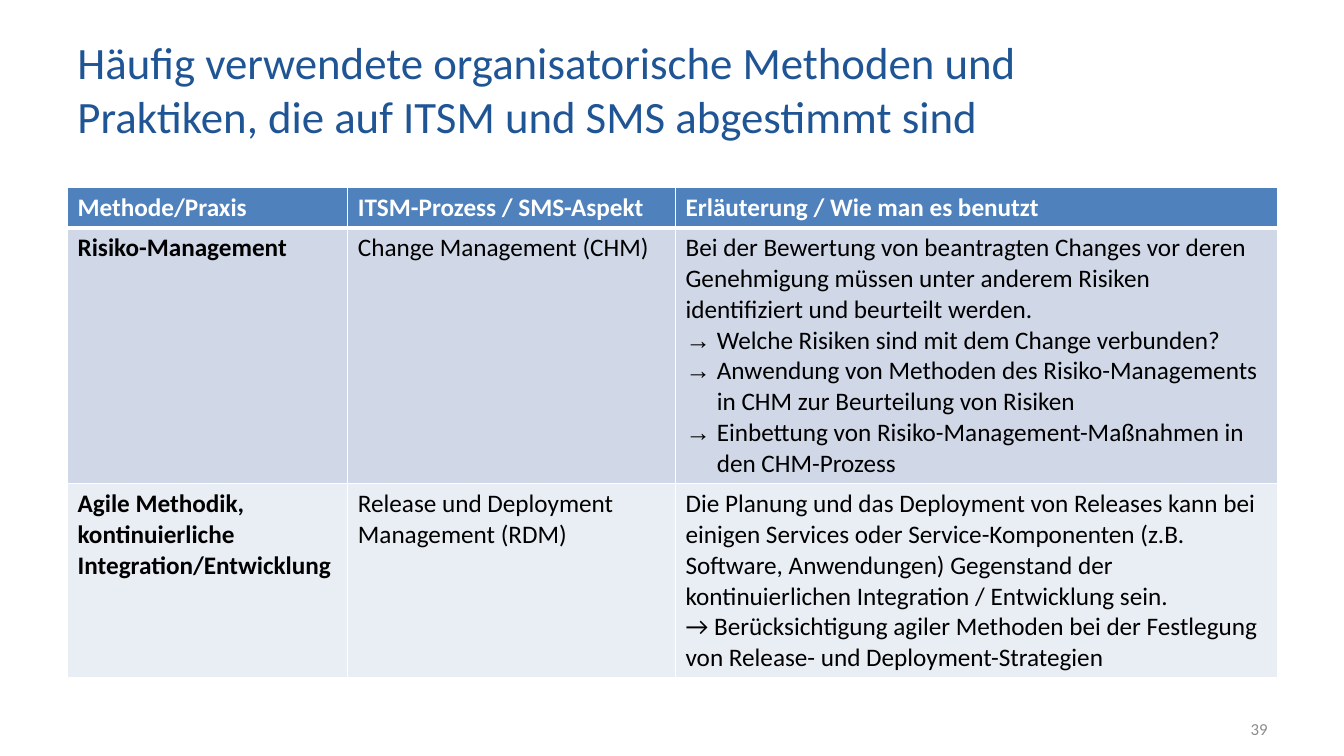
from dataclasses import dataclass

from lxml import etree
from pptx import Presentation
from pptx.dml.color import RGBColor
from pptx.enum.text import MSO_ANCHOR, PP_ALIGN
from pptx.oxml.ns import qn
from pptx.util import Inches, Pt

MIDDLE = MSO_ANCHOR.MIDDLE
LEFT, RIGHT = PP_ALIGN.LEFT, PP_ALIGN.RIGHT


@dataclass(frozen=True)
class Theme:
    font: str = "Calibri"
    title: str = "205595"
    header: str = "4F81BD"
    bands: tuple = ("D0D8E8", "E9EDF4")
    white: str = "FFFFFF"
    body: str = "000000"
    number: str = "8C8C8C"
    title_size: int = 32
    body_size: int = 18
    number_size: int = 12


THEME = Theme()
ARROW = "→"
BULLET_INDENT = 0.31
COLUMN_WIDTHS = (2.78, 3.25, 5.97)
ROW_HEIGHTS = (0.4, 2.54, 1.92)
METHODS = (
    (("Methode/Praxis",), ("ITSM-Prozess / SMS-Aspekt",),
     ("Erläuterung / Wie man es benutzt",)),
    (("Risiko-Management",), ("Change Management (CHM)",),
     ("Bei der Bewertung von beantragten Changes vor deren Genehmigung "
      "müssen unter anderem Risiken identifiziert und beurteilt werden.",
      ("Welche Risiken sind mit dem Change verbunden?",),
      ("Anwendung von Methoden des Risiko-Managements in CHM zur "
       "Beurteilung von Risiken",),
      ("Einbettung von Risiko-Management-Maßnahmen in den CHM-Prozess",))),
    (("Agile Methodik, kontinuierliche Integration/Entwicklung",),
     ("Release und Deployment Management (RDM)",),
     ("Die Planung und das Deployment von Releases kann bei einigen Services "
      "oder Service-Komponenten (z.B. Software, Anwendungen) Gegenstand der "
      "kontinuierlichen Integration / Entwicklung sein.",
      "→ Berücksichtigung agiler Methoden bei der Festlegung von Release- "
      "und Deployment-Strategien")),
)


def style_runs(paragraph, size, color, bold=False):
    for run in paragraph.runs:
        run.font.name = THEME.font
        run.font.size = Pt(size)
        run.font.bold = bold
        run.font.color.rgb = RGBColor.from_string(color)


def add_label(slide, box, wording, size, color, align):
    label = slide.shapes.add_textbox(*map(Inches, box))
    frame = label.text_frame
    frame.word_wrap = True
    frame.vertical_anchor = MIDDLE
    frame.text = wording
    frame.paragraphs[0].alignment = align
    style_runs(frame.paragraphs[0], size, color)


def add_arrow_bullet(paragraph):
    properties = paragraph._p.get_or_add_pPr()
    properties.set("marL", str(Inches(BULLET_INDENT)))
    properties.set("indent", str(-Inches(BULLET_INDENT)))
    etree.SubElement(properties, qn("a:buFont")).set("typeface", "Arial")
    etree.SubElement(properties, qn("a:buChar")).set("char", ARROW)


def set_borders(cell, widths):
    properties = cell._tc.get_or_add_tcPr()
    for position, (side, width) in enumerate(widths.items()):
        border = etree.Element(qn(f"a:{side}"), w=str(Pt(width)))
        fill = etree.SubElement(border, qn("a:solidFill"))
        etree.SubElement(fill, qn("a:srgbClr")).set("val", THEME.white)
        properties.insert(position, border)


def fill_cell(cell, paragraphs, row, column):
    is_header = row == 0
    background = THEME.header if is_header else THEME.bands[(row - 1) % 2]
    cell.fill.solid()
    cell.fill.fore_color.rgb = RGBColor.from_string(background)
    set_borders(cell, {"lnL": 1, "lnR": 1, "lnT": 3 if row == 1 else 1,
                       "lnB": 3 if is_header else 1})
    for index, content in enumerate(paragraphs):
        frame = cell.text_frame
        paragraph = frame.add_paragraph() if index else frame.paragraphs[0]
        if isinstance(content, tuple):
            add_arrow_bullet(paragraph)
            content = content[0]
        paragraph.text = content
        style_runs(paragraph, THEME.body_size,
                   THEME.white if is_header else THEME.body,
                   is_header or column == 0)


def add_method_table(slide, left, top):
    box = (left, top, sum(COLUMN_WIDTHS), sum(ROW_HEIGHTS))
    table = slide.shapes.add_table(
        len(METHODS), len(COLUMN_WIDTHS), *map(Inches, box)).table
    for column, width in zip(table.columns, COLUMN_WIDTHS):
        column.width = Inches(width)
    for row, height in zip(table.rows, ROW_HEIGHTS):
        row.height = Inches(height)
    for row, cells in enumerate(METHODS):
        for column, paragraphs in enumerate(cells):
            fill_cell(table.cell(row, column), paragraphs, row, column)


def main():
    deck = Presentation()
    deck.slide_width, deck.slide_height = Inches(13.33), Inches(7.5)
    slide = deck.slides.add_slide(deck.slide_layouts[6])
    add_label(slide, (0.67, 0.3, 9.91, 1.15),
              "Häufig verwendete organisatorische Methoden und Praktiken, "
              "die auf ITSM und SMS abgestimmt sind",
              THEME.title_size, THEME.title, LEFT)
    add_method_table(slide, 0.67, 1.86)
    add_label(slide, (9.56, 7.03, 3.11, 0.4), "39",
              THEME.number_size, THEME.number, RIGHT)
    deck.save("out.pptx")


if __name__ == "__main__":
    main()
